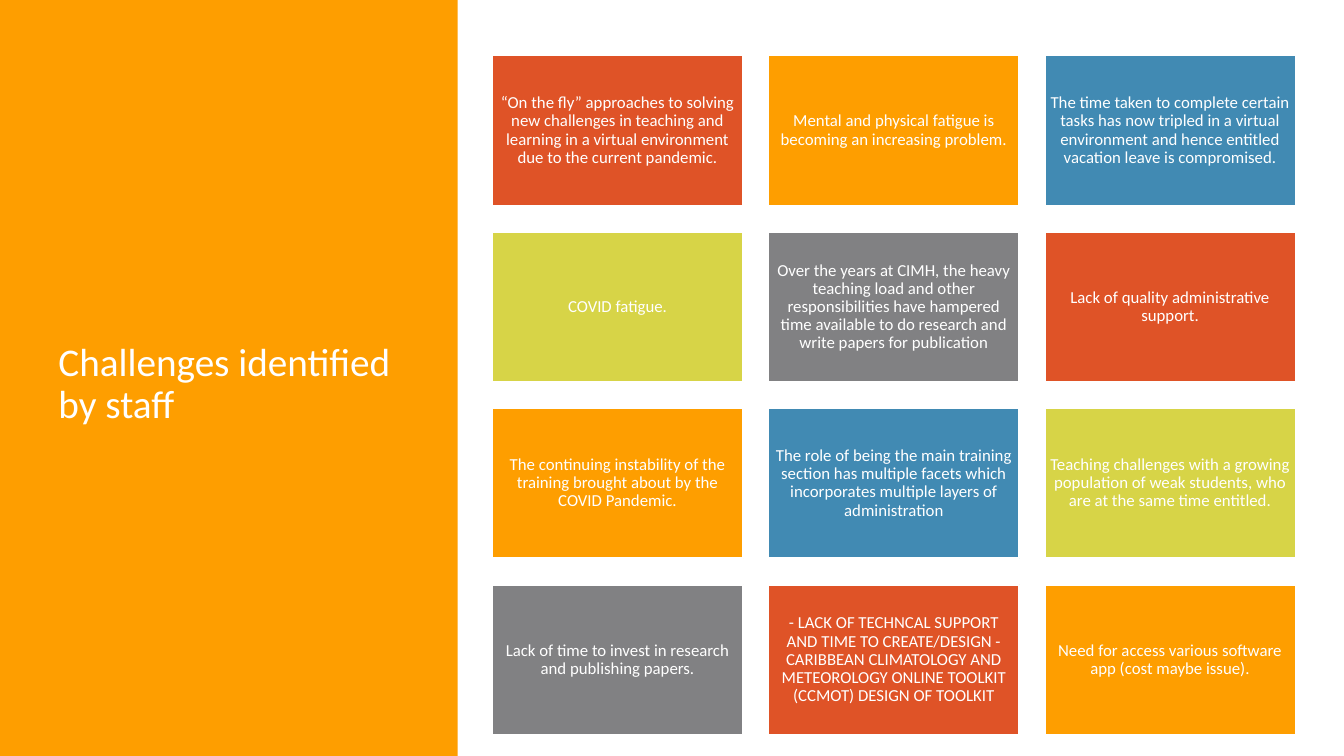
from dataclasses import dataclass

from pptx import Presentation
from pptx import util as u
from pptx.dml.color import RGBColor
from pptx.enum import shapes, text


@dataclass(frozen=True)
class Theme:
    font: str = "Calibri"
    title_size: int = 28
    card_size: int = 12
    white: str = "FFFFFF"
    panel: str = "FE9E00"
    cards: tuple = ("DF5327", "FE9E00", "418AB3", "D7D447", "818183")


THEME = Theme()

# Card grid, in inches
COLUMNS = 3
GRID_LEFT, GRID_TOP = 4.88, 0.55
CARD_WIDTH, CARD_HEIGHT = 2.49, 1.49
COLUMN_STEP, ROW_STEP = 2.74, 1.75

CHALLENGES = [
    "“On the fly” approaches to solving new challenges in teaching and "
    "learning in a virtual environment due to the current pandemic.",
    "Mental and physical fatigue is becoming an increasing problem.",
    "The time taken to complete certain tasks has now tripled in a virtual "
    "environment and hence entitled vacation leave is compromised.",
    "COVID fatigue.",
    "Over the years at CIMH, the heavy teaching load and other "
    "responsibilities have hampered time available to do research and "
    "write papers for publication",
    "Lack of quality administrative support.",
    "The continuing instability of the training brought about by the "
    "COVID Pandemic.",
    "The role of being the main training section has multiple facets which "
    "incorporates multiple layers of administration",
    "Teaching challenges with a growing population of weak students, who "
    "are at the same time entitled.",
    "Lack of time to invest in research and publishing papers.",
    "- LACK OF TECHNCAL SUPPORT AND TIME TO CREATE/DESIGN - CARIBBEAN "
    "CLIMATOLOGY AND METEOROLOGY ONLINE TOOLKIT (CCMOT) DESIGN OF TOOLKIT",
    "Need for access various software app (cost maybe issue).",
]


def rgb(colour):
    return RGBColor.from_string(colour)


def write(sp, wording, size, align):
    tf = sp.text_frame
    tf.text = wording
    tf.word_wrap = True
    tf.auto_size = text.MSO_AUTO_SIZE.NONE
    tf.vertical_anchor = text.MSO_ANCHOR.MIDDLE
    p = tf.paragraphs[0]
    p.alignment = align
    p.line_spacing = 0.9
    p.font.name = THEME.font
    p.font.size = u.Pt(size)
    p.font.color.rgb = rgb(THEME.white)
    return tf


def add_rect(s, left, top, width, height, colour):
    sp = s.shapes.add_shape(
        shapes.MSO_SHAPE.RECTANGLE,
        u.Inches(left), u.Inches(top), u.Inches(width), u.Inches(height))
    sp.shadow.inherit = False
    sp.fill.solid()
    sp.fill.fore_color.rgb = rgb(colour)
    sp.line.fill.background()
    return sp


def add_panel(s):
    sp = add_rect(s, 0, 0, 4.54, 7.5, THEME.panel)
    # Send the panel behind the title
    s.shapes.title.element.addprevious(sp.element)


def set_title(s, wording):
    sp = s.shapes.title
    sp.left, sp.top = u.Inches(0.48), u.Inches(0.96)
    sp.width, sp.height = u.Inches(3.58), u.Inches(5.71)
    write(sp, wording, THEME.title_size, text.PP_ALIGN.LEFT)


def add_card(s, index, wording):
    row, column = divmod(index, COLUMNS)
    sp = add_rect(s, GRID_LEFT + column * COLUMN_STEP,
                  GRID_TOP + row * ROW_STEP, CARD_WIDTH, CARD_HEIGHT,
                  THEME.cards[index % len(THEME.cards)])
    sp.line.color.rgb = rgb(THEME.white)
    sp.line.width = u.Pt(1.5)
    tf = write(sp, wording, THEME.card_size, text.PP_ALIGN.CENTER)
    tf.margin_left = tf.margin_right = u.Inches(0.05)
    tf.margin_top = tf.margin_bottom = u.Inches(0.05)


def main():
    prs = Presentation()
    prs.slide_width, prs.slide_height = u.Inches(13.33), u.Inches(7.5)
    s = prs.slides.add_slide(prs.slide_layouts.get_by_name("Title Only"))
    s.background.fill.solid()
    s.background.fill.fore_color.rgb = rgb(THEME.white)

    # Left panel with the title
    add_panel(s)
    set_title(s, "Challenges identified by staff")

    # Grid of challenges, colours cycling
    for index, wording in enumerate(CHALLENGES):
        add_card(s, index, wording)

    prs.save("out.pptx")


if __name__ == "__main__":
    main()
